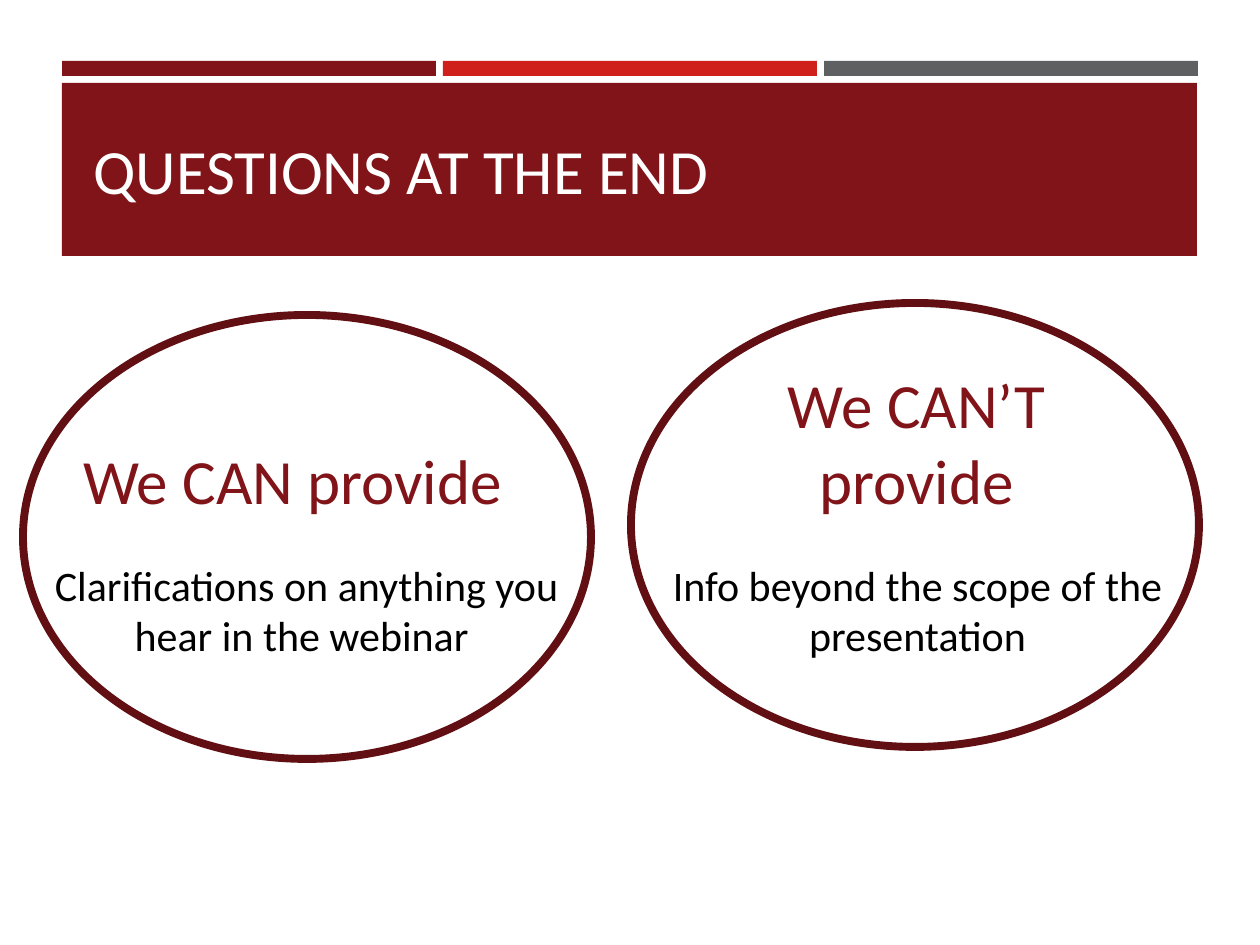
from pptx import Presentation
from pptx.dml.color import RGBColor
from pptx.enum.shapes import MSO_SHAPE
from pptx.enum.text import MSO_ANCHOR, PP_ALIGN
from pptx.util import Emu, Pt

SCALE = 914400 / 126  # EMU per px
COLORS = {
    "wine": "811419",
    "red": "D0201C",
    "gray": "5F6062",
    "ring": "610F13",
    "white": "FFFFFF",
    "black": "000000",
}


def px(*sizes):
    return [Emu(round(size * SCALE)) for size in sizes]


def color(name):
    return RGBColor.from_string(COLORS[name])


def add_bar(slide, box, fill):
    bar = slide.shapes.add_shape(MSO_SHAPE.RECTANGLE, *px(*box))
    bar.shadow.inherit = False
    bar.fill.solid()
    bar.fill.fore_color.rgb = color(fill)
    bar.line.fill.background()


def add_ring(slide, box):
    ring = slide.shapes.add_shape(MSO_SHAPE.OVAL, *px(*box))
    ring.shadow.inherit = False
    ring.fill.background()
    ring.line.color.rgb = color("ring")
    ring.line.width = Pt(4.5)


def add_text(slide, text, box, size=36, ink="wine",
             align=PP_ALIGN.CENTER, anchor=MSO_ANCHOR.BOTTOM, after=0):
    frame = slide.shapes.add_textbox(*px(*box)).text_frame
    frame.word_wrap = True
    frame.vertical_anchor = anchor
    para = frame.paragraphs[0]
    para.text = text
    para.alignment = align
    para.space_after = Pt(after)
    para.font.name = "Calibri"
    para.font.size = Pt(size)
    para.font.color.rgb = color(ink)


def add_topic(slide, head, body, ring, left, low):
    """Ring with a heading and a line of detail, each with its own left edge."""
    add_ring(slide, (*ring, 568, 444))
    add_text(slide, head, (left, 345, 455, 178))
    add_text(slide, body, (low, 553, 537, 140), size=24, ink="black",
             anchor=MSO_ANCHOR.TOP, after=6)


def main():
    deck = Presentation()
    deck.slide_width, deck.slide_height = px(1260, 945)
    slide = deck.slides.add_slide(deck.slide_layouts[6])

    # Three-colour strip above the title band
    for col, fill in enumerate(("wine", "red", "gray")):
        add_bar(slide, (62 + col * 381, 61, 374, 15), fill)

    # Title band
    add_bar(slide, (62, 83, 1135, 173), "wine")
    add_text(slide, "QUESTIONS AT THE END", (81, 95, 1101, 149), ink="white",
             align=PP_ALIGN.LEFT, anchor=MSO_ANCHOR.MIDDLE)

    # Two topics
    add_topic(slide, "We CAN provide",
              "Clarifications on anything you hear in the webinar ",
              ring=(23, 315), left=65, low=38)
    add_topic(slide, "We CAN’T provide",
              "Info beyond the scope of the presentation",
              ring=(631, 303), left=689, low=649)

    deck.save("out.pptx")


if __name__ == "__main__":
    main()
